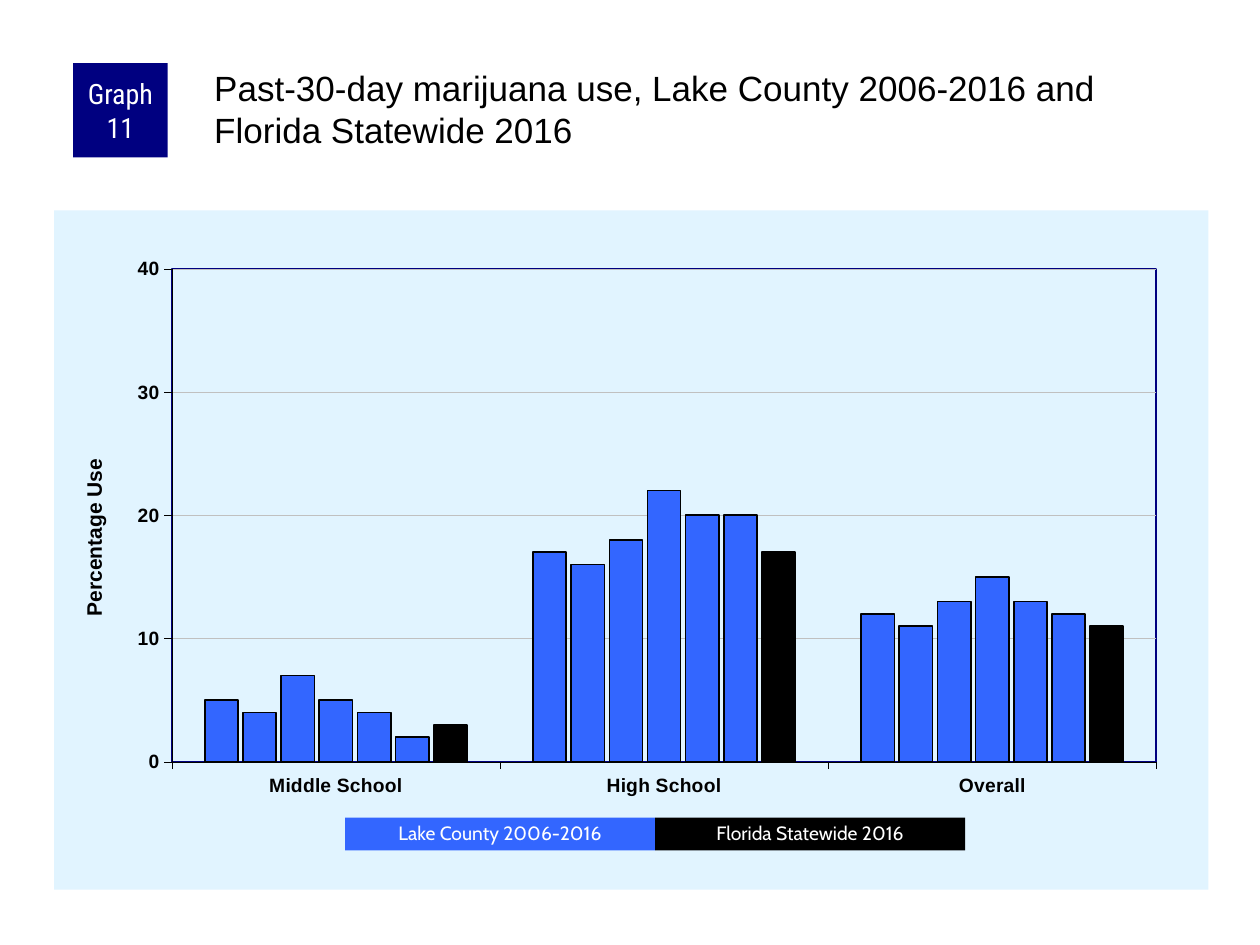
from lxml import etree
from pptx import Presentation
from pptx import util as u
from pptx.chart.data import CategoryChartData
from pptx.dml.color import RGBColor
from pptx.enum import chart as charts, shapes, text
from pptx.oxml import parse_xml
from pptx.oxml.ns import nsdecls, qn

COLORS = {
    "navy": "000080",
    "blue": "3366FF",
    "pale": "E1F4FF",
    "grid": "C0C0C0",
    "black": "000000",
    "white": "FFFFFF",
}

SCHOOLS = ["Middle School", "High School", "Overall"]
USE_RATES = [
    (5, 17, 12),
    (4, 16, 11),
    (7, 18, 13),
    (5, 22, 15),
    (4, 20, 13),
    (2, 20, 12),
    (3, 17, 11),
]


def color(name):
    return RGBColor.from_string(COLORS[name])


class SlideBuilder:
    body_font = "Arial"
    badge_font = "Roboto Condensed"
    legend_font = "Cabin"

    def __init__(self, deck):
        self.page = deck.slides.add_slide(deck.slide_layouts[5])

    def style_font(self, font, size, shade="black", name=None, bold=False):
        font.size = u.Pt(size)
        font.name = name or self.body_font
        font.bold = bold
        font.color.rgb = color(shade)

    def style_line(self, line, shade, width):
        line.color.rgb = color(shade)
        line.width = u.Pt(width)

    def title(self, words, left, top, width, height):
        box = self.page.shapes.title
        box.left, box.top = u.Inches(left), u.Inches(top)
        box.width, box.height = u.Inches(width), u.Inches(height)
        frame = box.text_frame
        frame.text = words
        frame.word_wrap = True
        frame.auto_size = text.MSO_AUTO_SIZE.NONE
        frame.vertical_anchor = text.MSO_ANCHOR.TOP
        frame.margin_left = frame.margin_top = u.Inches(0.03)
        frame.margin_right = frame.margin_bottom = 0
        para = frame.paragraphs[0]
        para.alignment = text.PP_ALIGN.LEFT
        self.style_font(para.runs[0].font, 20)

    def label(self, words, left, top, width, height, fill, size, font, spacing=1.0):
        box = self.page.shapes.add_shape(
            shapes.MSO_SHAPE.RECTANGLE,
            u.Inches(left), u.Inches(top), u.Inches(width), u.Inches(height),
        )
        box.shadow.inherit = False
        box.fill.solid()
        box.fill.fore_color.rgb = color(fill)
        box.line.fill.background()
        frame = box.text_frame
        frame.text = words
        frame.word_wrap = True
        frame.vertical_anchor = text.MSO_ANCHOR.MIDDLE
        frame.margin_left = frame.margin_right = u.Inches(0.05)
        frame.margin_top = frame.margin_bottom = 0
        para = frame.paragraphs[0]
        para.alignment = text.PP_ALIGN.CENTER
        para.line_spacing = spacing
        self.style_font(para.runs[0].font, size, "white", font)

    def place(self, parent, index, **values):
        for old in parent.findall(qn("c:layout")):
            parent.remove(old)
        layout = parse_xml(f"<c:layout {nsdecls('c')}/>")
        manual = etree.SubElement(layout, qn("c:manualLayout"))
        for tag, value in values.items():
            etree.SubElement(manual, qn(f"c:{tag}")).set("val", str(value))
        parent.insert(index, layout)

    def style_axis(self, axis):
        axis.major_tick_mark = charts.XL_TICK_MARK.OUTSIDE
        axis.minor_tick_mark = charts.XL_TICK_MARK.NONE
        self.style_font(axis.tick_labels.font, 11, bold=True)
        self.style_line(axis.format.line, "black", 0.25)

    def value_axis(self, axis, name):
        self.style_axis(axis)
        axis.minimum_scale, axis.maximum_scale, axis.major_unit = 0, 40, 10
        axis.has_major_gridlines = True
        self.style_line(axis.major_gridlines.format.line, "grid", 0.25)
        axis.has_title = True
        frame = axis.axis_title.text_frame
        frame.text = name
        self.style_font(frame.paragraphs[0].runs[0].font, 12, bold=True)
        self.place(axis.axis_title.element, 1,
                   xMode="edge", yMode="edge", x=0.02, y=0.36)

    def chart_areas(self, chart):
        root = chart.element.find(qn("c:chart"))
        root.addnext(parse_xml(
            f'<c:spPr {nsdecls("c", "a")}><a:solidFill><a:srgbClr val="{COLORS["pale"]}"/>'
            "</a:solidFill><a:ln><a:noFill/></a:ln></c:spPr>"
        ))
        area = root.find(qn("c:plotArea"))
        self.place(area, 0, layoutTarget="inner", xMode="edge", yMode="edge",
                   x=0.102, y=0.086, w=0.853, h=0.726)
        area.append(parse_xml(
            f'<c:spPr {nsdecls("c", "a")}><a:noFill/><a:ln w="{u.Pt(1)}"><a:solidFill>'
            f'<a:srgbClr val="{COLORS["navy"]}"/></a:solidFill></a:ln></c:spPr>'
        ))

    def column_chart(self, left, top, width, height):
        data = CategoryChartData()
        data.categories = SCHOOLS
        for number, rates in enumerate(USE_RATES, 1):
            data.add_series(f"Series {number}", rates)
        chart = self.page.shapes.add_chart(
            charts.XL_CHART_TYPE.COLUMN_CLUSTERED,
            u.Inches(left), u.Inches(top), u.Inches(width), u.Inches(height), data,
        ).chart
        chart.has_title = False
        chart.has_legend = False
        self.style_font(chart.font, 8)
        plot = chart.plots[0]
        plot.vary_by_categories = False
        plot.gap_width = 200
        plot.overlap = -15
        statewide = len(USE_RATES) - 1
        for index, series in enumerate(plot.series):
            series.format.fill.solid()
            series.format.fill.fore_color.rgb = color("black" if index == statewide else "blue")
            self.style_line(series.format.line, "black", 1)
        self.style_axis(chart.category_axis)
        self.value_axis(chart.value_axis, "Percentage Use")
        self.chart_areas(chart)


def main():
    deck = Presentation()
    deck.slide_width, deck.slide_height = u.Inches(10), u.Inches(7.5)
    slide = SlideBuilder(deck)
    slide.column_chart(0.43, 1.67, 9.16, 5.39)
    slide.label("Graph 11", 0.58, 0.5, 0.75, 0.75, "navy", 16, slide.badge_font)
    slide.title("Past-30-day marijuana use, Lake County 2006-2016 and Florida Statewide 2016",
                1.67, 0.5, 7.92, 0.83)
    legend = [("Lake County 2006-2016", "blue"), ("Florida Statewide 2016", "black")]
    for index, (name, fill) in enumerate(legend):
        slide.label(name, 2.74 + index * 2.46, 6.49, 2.46, 0.26, fill, 11,
                    slide.legend_font, 0.9)
    deck.save("out.pptx")


if __name__ == "__main__":
    main()
